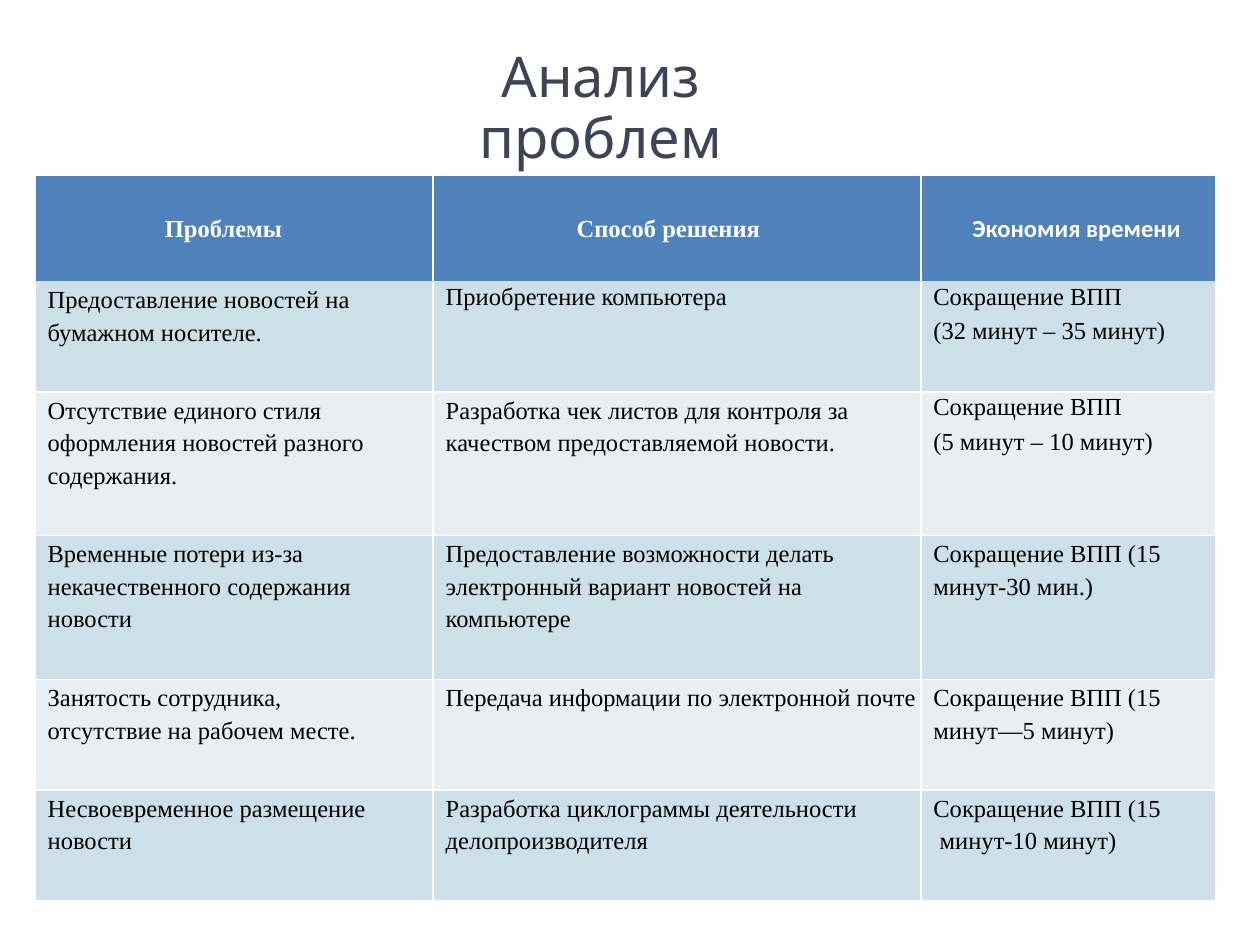
from dataclasses import dataclass

from lxml.etree import SubElement
from pptx import Presentation
from pptx.dml.color import RGBColor
from pptx.enum.text import MSO_ANCHOR as Anchor, PP_ALIGN as Align
from pptx.oxml.ns import qn
from pptx.util import Pt

WHITE = RGBColor(0xFF, 0xFF, 0xFF)
BLACK = RGBColor(0, 0, 0)
SLATE = RGBColor(0x3B, 0x45, 0x55)
BLUE = RGBColor(0x4F, 0x81, 0xBC)
PALE = RGBColor(0xCD, 0xDF, 0xE8)
LIGHT = RGBColor(0xE8, 0xEF, 0xF4)

SERIF = "Times New Roman"
WIDTHS = (227.5, 278.7, 168.5)
RIGHTS = (30, 0, 0)


@dataclass
class Item:
    text: str
    left: float = 7.2
    first: float = 0
    space: float = 1.2
    face: str = SERIF


@dataclass
class Row:
    height: float
    items: tuple[Item, ...]


HEAD = Row(60.5, (
    Item("Проблемы", left=74.2, space=1.07),
    Item("Способ решения", left=82, space=1.07),
    Item("Экономия времени", left=29.5, space=1.07, face="Calibri"),
))
BODY = (
    Row(63.2, (
        Item("Предоставление новостей на бумажном носителе."),
        Item("Приобретение компьютера", space=1.07),
        Item("Сокращение ВПП\n(32 минут – 35 минут)", space=1.07),
    )),
    Row(82.2, (
        Item("Отсутствие единого стиля оформления новостей разного содержания."),
        Item("Разработка чек листов для контроля за качеством предоставляемой новости."),
        Item("Сокращение ВПП\n(5 минут – 10 минут)", space=1.07),
    )),
    Row(82.2, (
        Item("Временные потери из-за некачественного содержания новости"),
        Item("Предоставление возможности делать электронный вариант новостей на компьютере"),
        Item("Сокращение ВПП (15 минут-30 мин.)"),
    )),
    Row(63.2, (
        Item("Занятость сотрудника, отсутствие на рабочем месте."),
        Item("Передача информации по электронной почте"),
        Item("Сокращение ВПП (15 минут—5 минут)"),
    )),
    Row(63.2, (
        Item("Несвоевременное размещение новости"),
        Item("Разработка циклограммы деятельности делопроизводителя"),
        Item("Сокращение ВПП (15 минут-10 минут)", left=10.8, first=-3.6),
    )),
)


def edge(cell, sides: dict[str, RGBColor]) -> None:
    """Draw 1 pt borders; they must come before the cell fill."""
    props = cell._tc.get_or_add_tcPr()
    for side, color in sides.items():
        line = SubElement(props, qn(f"a:ln{side}"), w=str(Pt(1)))
        fill = SubElement(line, qn("a:solidFill"))
        SubElement(fill, qn("a:srgbClr"), val=str(color))


def write(cell, item: Item, color: RGBColor, bold: bool) -> None:
    frame = cell.text_frame
    frame.text = item.text
    for num, para in enumerate(frame.paragraphs):
        props = para._p.get_or_add_pPr()
        props.set("marL", str(Pt(item.left)))
        props.set("indent", str(Pt(item.first)))
        para.alignment = Align.LEFT
        para.line_spacing = item.space
        if num:
            para.space_before = Pt(3.2)
        font = para.font
        font.name, font.size, font.bold = item.face, Pt(14), bold
        font.color.rgb = color


def draw_row(table, num: int, row: Row) -> None:
    table.rows[num].height = Pt(row.height)
    head = num == 0
    fill = BLUE if head else PALE if num % 2 else LIGHT
    sides = {"L": WHITE, "R": WHITE,
             "T": PALE if num == 1 else WHITE,
             "B": PALE if head else WHITE}
    for col, item in enumerate(row.items):
        cell = table.cell(num, col)
        cell.margin_left = cell.margin_top = cell.margin_bottom = 0
        cell.margin_right = Pt(RIGHTS[col])
        cell.vertical_anchor = Anchor.MIDDLE if head else Anchor.TOP
        edge(cell, sides)
        cell.fill.solid()
        cell.fill.fore_color.rgb = fill
        write(cell, item, WHITE if head else BLACK, head)


def draw_title(title, text: str) -> None:
    title.left, title.top = Pt(212.4), Pt(20.9)
    title.width, title.height = Pt(262), Pt(46)
    frame = title.text_frame
    frame.text = text
    frame.word_wrap = True
    frame.vertical_anchor = Anchor.TOP
    frame.margin_top = Pt(7.2)
    para = frame.paragraphs[0]
    para.alignment = Align.CENTER
    para.line_spacing = 0.9
    para.font.name, para.font.size = "League Spartan", Pt(32)
    para.font.color.rgb = SLATE


def main() -> None:
    deck = Presentation()
    deck.slide_width, deck.slide_height = Pt(720), Pt(540)
    slide = deck.slides.add_slide(deck.slide_layouts[5])
    draw_title(slide.shapes.title, "Анализ проблем")

    # Problem table
    rows = (HEAD, *BODY)
    table = slide.shapes.add_table(
        len(rows), len(WIDTHS), Pt(20), Pt(100.3),
        Pt(sum(WIDTHS)), Pt(sum(row.height for row in rows))).table
    for col, width in zip(table.columns, WIDTHS):
        col.width = Pt(width)
    for num, row in enumerate(rows):
        draw_row(table, num, row)

    deck.save("out.pptx")


if __name__ == "__main__":
    main()
